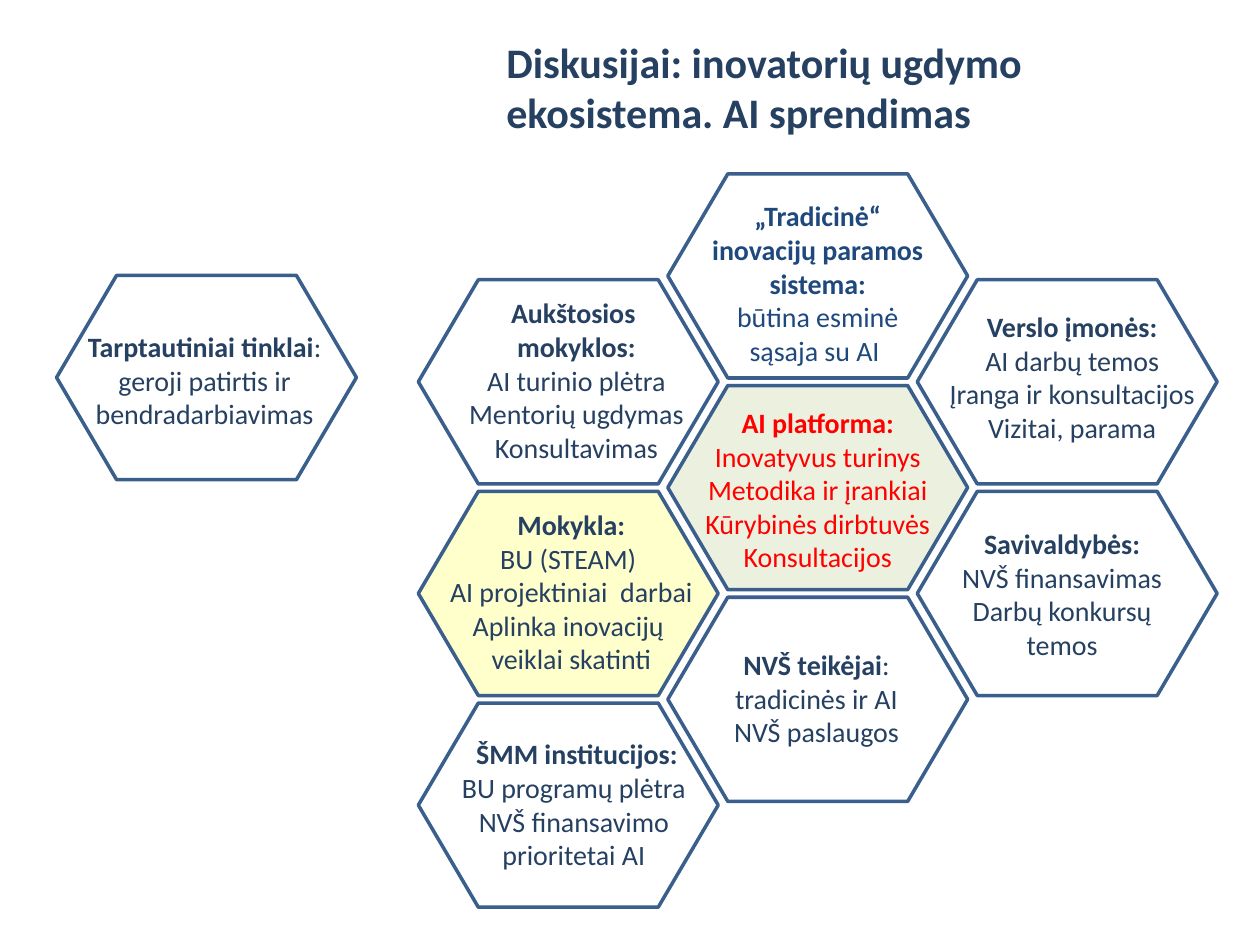
"""Build a honeycomb slide of the innovators' education ecosystem."""
from dataclasses import dataclass

from pptx import Presentation
from pptx import util as u
from pptx.dml.color import RGBColor
from pptx.enum import shapes, text


@dataclass(frozen=True)
class Theme:
    font: str = "Calibri"
    title_size: int = 24
    body_size: int = 16
    line_width: int = 2
    outline: str = "3A5F8C"
    navy: str = "254061"
    blue: str = "1F497D"
    red: str = "FF0000"
    yellow: str = "FFFFCC"
    green: str = "EBF1DE"
    white: str = "FFFFFF"


T = Theme()
SLIDE_W, SLIDE_H = 10, 7.5
HEX_W, HEX_H = 2.38, 1.62
LEFT, TOP = 3.32, 1.38
COL_STEP, ROW_STEP = 1.98, 0.84
LINE_H, INSETS = 0.27, 0.1

TITLE = "Diskusijai: inovatorių ugdymo ekosistema. AI sprendimas"
TITLE_BOX = (3.92, 0.31, 5.17, 0.76)


def bold(*lines):
    return [[(line, True)] for line in lines]


def plain(*lines):
    return [[(line, False)] for line in lines]


# cell: column, half-row; label: offset in the cell, width, line count
CELLS = [
    dict(cell=(1, 0), label=(0.18, 0.15, 2.02, 5), color=T.blue,
         paras=bold("„Tradicinė“ inovacijų paramos sistema:")
         + plain("būtina esminė sąsaja su AI ")),
    dict(cell=(0, 3), label=(0, 0.08, 2.43, 5), fill=T.yellow,
         paras=bold("Mokykla:")
         + plain("BU (STEAM) ", "AI projektiniai  darbai",
                 "Aplinka inovacijų ", "veiklai skatinti")),
    dict(cell=(1, 2), label=(0.1, 0.11, 2.18, 5), fill=T.green, color=T.red,
         paras=bold("AI platforma:")
         + plain("Inovatyvus turinys", "Metodika ir įrankiai",
                 "Kūrybinės dirbtuvės", "Konsultacijos")),
    dict(cell=(2, 1), label=(0, 0.19, 2.46, 4),
         paras=bold("Verslo įmonės:")
         + plain("AI darbų temos", "Įranga ir konsultacijos",
                 "Vizitai, parama")),
    dict(cell=(1, 4), label=(0.24, 0.35, 1.88, 3),
         paras=[[("NVŠ teikėjai", True),
                 (": tradicinės ir AI NVŠ paslaugos", False)]]),
    dict(cell=(2, 3), label=(0.05, 0.23, 2.2, 4),
         paras=bold("Savivaldybės:")
         + plain("NVŠ finansavimas", "Darbų konkursų temos")),
    dict(cell=(0, 5), label=(0.13, 0.22, 2.26, 4),
         paras=bold("ŠMM institucijos:")
         + plain("BU programų plėtra ", "NVŠ finansavimo ",
                 "prioritetai AI ")),
    dict(cell=(0, 1), label=(0.08, 0.08, 2.35, 5),
         paras=bold("Aukštosios ", "mokyklos:")
         + plain("AI turinio plėtra", "Mentorių ugdymas", "Konsultavimas")),
    dict(cell=(-1.45, 0.96), label=(0.09, 0.38, 2.17, 3), fill=T.white,
         paras=[[("Tarptautiniai tinklai", True), (":", False)]]
         + plain("geroji patirtis ir bendradarbiavimas")),
]


def inches(box):
    return [u.Inches(v) for v in box]


def origin(cell):
    col, row = cell
    return LEFT + col * COL_STEP, TOP + row * ROW_STEP


def add_hexagon(s, cell, fill=None):
    sp = s.shapes.add_shape(shapes.MSO_SHAPE.FLOWCHART_PREPARATION,
                            *inches((*origin(cell), HEX_W, HEX_H)))
    sp.shadow.inherit = False
    if fill:
        sp.fill.solid()
        sp.fill.fore_color.rgb = RGBColor.from_string(fill)
    else:
        sp.fill.background()
    sp.line.color.rgb = RGBColor.from_string(T.outline)
    sp.line.width = u.Pt(T.line_width)


def add_text(s, box, paras, size, color, align, anchor):
    tf = s.shapes.add_textbox(*inches(box)).text_frame
    tf.word_wrap = True
    tf.vertical_anchor = anchor
    for i, runs in enumerate(paras):
        p = tf.add_paragraph() if i else tf.paragraphs[0]
        p.alignment = align
        for content, is_bold in runs:
            r = p.add_run()
            r.text = content
            r.font.name = T.font
            r.font.size = u.Pt(size)
            r.font.bold = is_bold
            r.font.color.rgb = RGBColor.from_string(color)


def main():
    prs = Presentation()
    prs.slide_width, prs.slide_height = inches((SLIDE_W, SLIDE_H))
    s = prs.slides.add_slide(prs.slide_layouts[6])
    add_text(s, TITLE_BOX, bold(TITLE), T.title_size, T.navy,
             text.PP_ALIGN.LEFT, text.MSO_ANCHOR.MIDDLE)
    for c in CELLS:
        add_hexagon(s, c["cell"], c.get("fill"))
    for c in CELLS:
        x, y = origin(c["cell"])
        dx, dy, width, lines = c["label"]
        box = (x + dx, y + dy, width, lines * LINE_H + INSETS)
        add_text(s, box, c["paras"], T.body_size, c.get("color", T.navy),
                 text.PP_ALIGN.CENTER, text.MSO_ANCHOR.TOP)
    prs.save("out.pptx")


if __name__ == "__main__":
    main()
